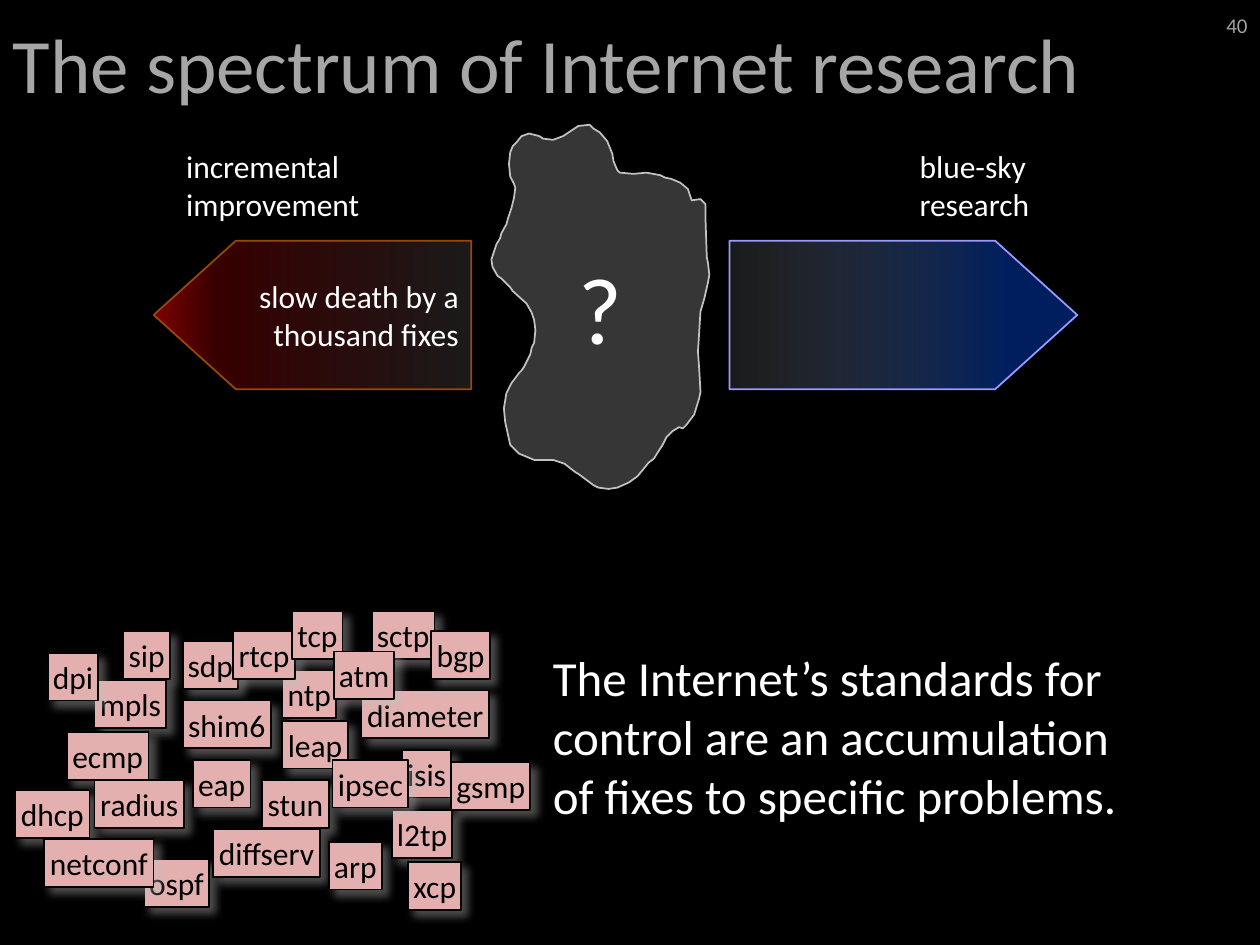
from lxml.etree import SubElement, fromstring
from pptx import Presentation
from pptx.dml.color import RGBColor as Rgb
from pptx.enum.shapes import MSO_SHAPE as Kind
from pptx.enum.text import MSO_ANCHOR as Anchor, MSO_AUTO_SIZE as Auto, PP_ALIGN as Align
from pptx.oxml.ns import nsdecls, qn
from pptx.util import Inches, Pt

THEME = {
    "font": "Calibri",
    "back": "000000", "head": "A6A6A6", "num": "A2A2A2",
    "light": "FFFFFF", "dark": "000000",
    "blob": "363636", "edge": "C2C2C2",
    "tag": "E3B0AF", "rim": "000000", "shade": "C2C2C2",
    "title": 44, "mark": 54, "claim": 28, "label": 18, "small": 12,
}

deck = Presentation()
deck.slide_width, deck.slide_height = Inches(10), Inches(7.5)
COL, ROW = deck.slide_width / 100, deck.slide_height / 75
slide = deck.slides.add_slide(deck.slide_layouts[5])
slide.background.fill.solid()
slide.background.fill.fore_color.rgb = Rgb.from_string(THEME["back"])


def place(x, y, w, h):
    """Turn columns and rows of the 100 by 75 grid into slide lengths."""
    return [round(n) for n in (x * COL, y * ROW, w * COL, h * ROW)]


def write(shape, text, size="label", color="light", align=Align.LEFT,
          anchor=Anchor.TOP, wrap=True, auto=Auto.NONE, inset=None):
    frame = shape.text_frame
    frame.word_wrap, frame.auto_size = wrap, auto
    frame.vertical_anchor = anchor
    if inset is not None:
        frame.margin_left = frame.margin_right = inset
        frame.margin_top = frame.margin_bottom = inset
    para = frame.paragraphs[0]
    para.alignment = align
    for i, line in enumerate(text.splitlines()):
        if i:
            para.add_line_break()
        run = para.add_run()
        run.text = line
        run.font.name, run.font.size = THEME["font"], Pt(THEME[size])
        run.font.color.rgb = Rgb.from_string(THEME[color])


# Title and page number
title = slide.shapes.title
title.left, title.top, title.width, title.height = place(0, 0, 100, 9.9)
write(title, "The spectrum of Internet research", size="title", color="head",
      anchor=Anchor.MIDDLE)
page = slide.shapes.add_textbox(*place(91.7, 0, 8.3, 4))
write(page, "40", size="small", color="num", align=Align.RIGHT, anchor=Anchor.MIDDLE)

# Two arrows: left, width, flipped, line, gradient stops (place, colour, opacity), text
arrows = [
    (12.2, 25.2, True, "984807",
     [(0, "595959", 30), (80, "C00000", 28), (100, "C00000", 66)],
     "slow death by a thousand fixes"),
    (57.9, 27.6, False, "9999FF",
     [(0, "595959", 30), (80, "002060", 100), (100, "002060", 100)], ""),
]
for x, w, flip, line, stops, text in arrows:
    arrow = slide.shapes.add_shape(Kind.RIGHT_ARROW, *place(x, 19.1, w, 11.8))
    arrow.adjustments[0], arrow.adjustments[1] = 1, 0.553
    arrow.shadow.inherit = False
    arrow.line.color.rgb, arrow.line.width = Rgb.from_string(line), Pt(1)
    arrow.fill.background()
    props = arrow.element.spPr
    marks = "".join(
        f'<a:gs pos="{pos * 1000}"><a:srgbClr val="{rgb}">'
        f'<a:alpha val="{alpha * 1000}"/></a:srgbClr></a:gs>'
        for pos, rgb, alpha in stops)
    props.replace(props.find(qn("a:noFill")), fromstring(
        f'<a:gradFill {nsdecls("a")} rotWithShape="1"><a:gsLst>{marks}</a:gsLst>'
        '<a:lin ang="0" scaled="0"/></a:gradFill>'))
    if flip:
        props.find(qn("a:xfrm")).set("flipH", "1")
    if text:
        write(arrow, text, align=Align.RIGHT, anchor=Anchor.MIDDLE)

for x, text in [(72, "blue-sky\nresearch"), (13.8, "incremental\nimprovement")]:
    label = slide.shapes.add_textbox(*place(x, 11.2, 19.7, 7.1))
    write(label, text, auto=Auto.SHAPE_TO_FIT_TEXT)

# Unknown middle ground, outlined in tenths of a column
coast = [
    (546, 150), (540, 145), (533, 142), (528, 141), (524, 139), (513, 137), (503, 138),
    (492, 137), (490, 135), (487, 128), (486, 122), (484, 117), (482, 112), (476, 105),
    (471, 102), (468, 99), (459, 100), (453, 104), (447, 108), (439, 111), (431, 110),
    (428, 108), (420, 106), (414, 108), (410, 113), (407, 116), (405, 121), (404, 130),
    (405, 140), (408, 146), (409, 149), (408, 157), (406, 165), (403, 174), (402, 178),
    (398, 185), (397, 189), (394, 194), (390, 206), (391, 212), (395, 219), (398, 221),
    (405, 228), (407, 231), (418, 241), (422, 248), (424, 254), (425, 262), (424, 272),
    (422, 276), (421, 281), (416, 291), (414, 294), (412, 296), (406, 304), (402, 312),
    (400, 324), (401, 335), (403, 344), (405, 353), (412, 360), (424, 365), (439, 365),
    (448, 368), (457, 375), (459, 376), (471, 385), (475, 387), (483, 388), (490, 387),
    (499, 383), (506, 378), (515, 367), (519, 364), (524, 356), (526, 353), (529, 347),
    (534, 342), (539, 339), (542, 340), (545, 337), (551, 329), (555, 316), (556, 311),
    (555, 293), (554, 279), (556, 247), (557, 244), (559, 237), (562, 224), (563, 218),
    (562, 209), (561, 204), (560, 174), (560, 162), (556, 158), (549, 159),
]
pen = slide.shapes.build_freeform(*coast[0], scale=COL / 10)
pen.add_line_segments(coast[1:], close=True)
blob = pen.convert_to_shape()
blob.shadow.inherit = False
blob.fill.solid()
blob.fill.fore_color.rgb = Rgb.from_string(THEME["blob"])
blob.line.color.rgb, blob.line.width = Rgb.from_string(THEME["edge"]), Pt(1)
write(blob, "?", size="mark", align=Align.CENTER, anchor=Anchor.MIDDLE)

# Heap of protocol tags, back to front: text, left, top, width
tags = [
    ("sip", 9.8, 50.1, 3.7), ("sdp", 14.5, 50.9, 4.4), ("ntp", 22.4, 53.2, 4.3),
    ("rtcp", 18.5, 50.1, 4.9), ("tcp", 23.2, 48.5, 4), ("sctp", 29.5, 48.5, 5),
    ("mpls", 7.5, 54, 5.7), ("ecmp", 5.3, 58.1, 6.5), ("shim6", 14.5, 55.6, 7),
    ("leap", 22.4, 57.2, 5.2), ("diameter", 28.7, 54.8, 10.1), ("dhcp", 1.2, 62.7, 5.9),
    ("radius", 7.5, 61.9, 7.1), ("eap", 15.3, 60.3, 4.6), ("stun", 20.8, 61.9, 5.3),
    ("isis", 31.9, 59.5, 3.9), ("ospf", 11.4, 68.2, 5.2), ("diffserv", 16.9, 65.8, 8.5),
    ("arp", 26.1, 66.8, 4.2), ("l2tp", 31.1, 64.3, 4.8), ("ipsec", 26.4, 60.3, 6),
    ("gsmp", 35.8, 60.5, 6.3), ("bgp", 34.2, 50.1, 4.7), ("netconf", 3.5, 66.6, 8.7),
    ("dpi", 3.8, 51.8, 4), ("xcp", 32.4, 68.4, 4.2), ("atm", 26.5, 51.7, 4.8),
]
heap = slide.shapes.add_group_shape()
for text, x, y, w in tags:
    home = slide if text == "atm" else heap
    tag = home.shapes.add_shape(Kind.RECTANGLE, *place(x, y, w, 3.8))
    tag.fill.solid()
    tag.fill.fore_color.rgb = Rgb.from_string(THEME["tag"])
    tag.line.color.rgb, tag.line.width = Rgb.from_string(THEME["rim"]), Pt(1)
    tag.shadow.inherit = False
    glow = SubElement(tag.element.spPr.find(qn("a:effectLst")), qn("a:outerShdw"),
                      blurRad=str(Pt(5)), dist=str(Pt(5)), dir=str(45 * 60000),
                      algn="tl", rotWithShape="0")
    tint = SubElement(glow, qn("a:srgbClr"), val=THEME["shade"])
    SubElement(tint, qn("a:alpha"), val="40000")
    write(tag, text, color="dark", align=Align.CENTER, anchor=Anchor.MIDDLE,
          wrap=False, inset=0)

claim = slide.shapes.add_textbox(*place(42.9, 50.9, 50, 15.1))
write(claim, "The Internet’s standards for control are an accumulation "
      "of fixes to specific problems.", size="claim", auto=Auto.SHAPE_TO_FIT_TEXT)

deck.save("out.pptx")
